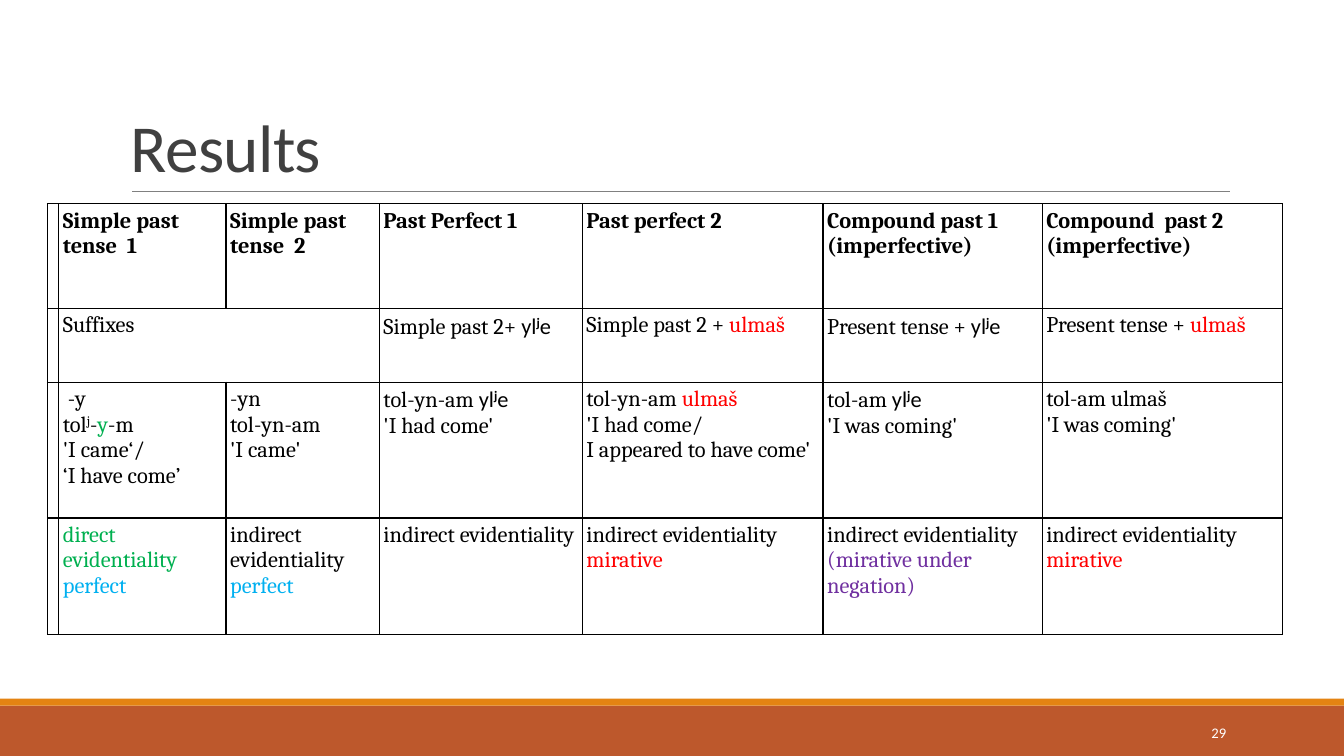
from dataclasses import dataclass

from lxml import etree
from pptx import Presentation
from pptx.dml.color import RGBColor
from pptx.enum.shapes import MSO_CONNECTOR, MSO_SHAPE
from pptx.enum.text import MSO_ANCHOR, PP_ALIGN
from pptx.oxml.ns import qn
from pptx.util import Pt

LEFT, RIGHT, JUSTIFY = PP_ALIGN.LEFT, PP_ALIGN.RIGHT, PP_ALIGN.JUSTIFY
TOP, MIDDLE, BOTTOM = MSO_ANCHOR.TOP, MSO_ANCHOR.MIDDLE, MSO_ANCHOR.BOTTOM
RECTANGLE, STRAIGHT = MSO_SHAPE.RECTANGLE, MSO_CONNECTOR.STRAIGHT


@dataclass(frozen=True)
class Theme:
    sans: str = "Calibri"
    serif: str = "Cambria"
    title_size: float = 48
    table_size: float = 16
    number_size: float = 10.5
    title: str = "404040"
    rule: str = "808080"
    footer: str = "BD582C"
    stripe: str = "E48312"
    white: str = "FFFFFF"
    black: str = "000000"
    red: str = "FF0000"
    green: str = "00B050"
    blue: str = "00B0F0"
    violet: str = "7030A0"


THEME = Theme()


def span(text, **style):
    return text, style


def line(*spans, align=LEFT):
    """One table paragraph; plain strings take the table's default style."""
    return [part if isinstance(part, tuple) else span(part) for part in spans], align


def even(*spans):
    return line(*spans, align=JUSTIFY)


# Recurring wording
YLE = (span("yl", font=THEME.sans),
       span("j", font=THEME.sans, bold=True, raised=30),
       span("e", font=THEME.sans))
ULMAS = span("ulmaš", color=THEME.red)
ULMAS_SPACED = span("ulmaš ", color=THEME.red)
INDIRECT = even("indirect evidentiality")
PERFECT = line(span("perfect", color=THEME.blue))
MIRATIVE = even(span("mirative", color=THEME.red))
WAS_COMING = "'I was coming'"

# Each row lists its cells after the narrow empty column; None is merged away
TENSES = [
    [
        [line("Simple past tense  1")],
        [line("Simple past tense  2")],
        [even("Past Perfect 1")],
        [even("Past perfect 2")],
        [even("Compound past 1"), even("(imperfective)")],
        [even("Compound  past 2"), even("(imperfective)")],
    ],
    [
        [even("Suffixes")],
        None,
        [even("Simple past 2+ ", *YLE)],
        [even("Simple past 2 + ", ULMAS)],
        [even("Present tense + ", *YLE)],
        [even("Present tense + ", ULMAS)],
    ],
    [
        [line(" -y"),
         line("tol", span("j", raised=30), "-", span("y", color=THEME.green), "-m"),
         line("'I came‘/"), line("‘I have come’")],
        [line("-yn"), line("tol-yn-am"), line("'I came'")],
        [even("tol-yn-am ", *YLE), even("'I had come'")],
        [even("tol-yn-am ", ULMAS_SPACED), even("'I had come/"),
         even("I appeared to have come'")],
        [line("tol-am ", *YLE), line(WAS_COMING)],
        [even("tol-am ulmaš "), even(WAS_COMING)],
    ],
    [
        [line(span("direct evidentiality", color=THEME.green)), PERFECT],
        [line("indirect evidentiality"), PERFECT],
        [INDIRECT],
        [INDIRECT, MIRATIVE],
        [INDIRECT, line(span("(mirative under negation)", color=THEME.violet))],
        [INDIRECT, MIRATIVE],
    ],
]
COLUMN_WIDTHS = [8, 119.5, 109.5, 145, 172, 156.5, 172]
ROW_HEIGHTS = [75, 52.5, 97, 83.5]


def write(para, text, font=THEME.serif, size=THEME.table_size, color=THEME.black,
          bold=False, raised=0, tracking=0):
    run = para.add_run()
    run.text = text
    run.font.name, run.font.size, run.font.bold = font, Pt(size), bold
    run.font.color.rgb = RGBColor.from_string(color)
    properties = run.font._element
    if raised:
        properties.set("baseline", str(raised * 1000))
    if tracking:
        properties.set("spc", str(round(tracking * 100)))


def add_text(page, box, text, align=LEFT, anchor=TOP, spacing=1.0, **style):
    frame = page.shapes.add_textbox(*map(Pt, box)).text_frame
    frame.word_wrap = True
    frame.vertical_anchor = anchor
    para = frame.paragraphs[0]
    para.alignment, para.line_spacing = align, spacing
    write(para, text, **style)


def add_band(page, box, color):
    band = page.shapes.add_shape(RECTANGLE, *map(Pt, box))
    band.shadow.inherit = False
    band.fill.solid()
    band.fill.fore_color.rgb = RGBColor.from_string(color)
    band.line.fill.background()


def add_footer(page, box, number):
    left, top, width, height = box
    stripe = 5
    add_band(page, (left, top + stripe, width, height - stripe), THEME.footer)
    add_band(page, (left, top, width, stripe), THEME.stripe)
    add_text(page, (left + width - 180, top + 9.5, 103, 29), number, align=RIGHT,
             anchor=MIDDLE, font=THEME.sans, size=THEME.number_size, color=THEME.white)


def add_title(page, box, text):
    left, top, width, height = box
    add_text(page, box, text, anchor=BOTTOM, spacing=0.85, font=THEME.sans,
             size=THEME.title_size, color=THEME.title, tracking=-0.5)
    # Rule along the bottom of the title
    base = Pt(top + height)
    rule = page.shapes.add_connector(STRAIGHT, Pt(left + 8), base, Pt(left + width), base)
    rule.line.color.rgb = RGBColor.from_string(THEME.rule)
    rule.line.width = Pt(0.5)
    etree.SubElement(rule._element.spPr, qn("a:effectLst"))


def add_borders(cell, color=THEME.black, width=1):
    properties = cell._tc.get_or_add_tcPr()
    for index, side in enumerate(("lnL", "lnR", "lnT", "lnB")):
        border = etree.Element(qn(f"a:{side}"), w=str(Pt(width)))
        fill = etree.SubElement(border, qn("a:solidFill"))
        etree.SubElement(fill, qn("a:srgbClr"), val=color)
        properties.insert(index, border)


def fill_cell(cell, lines, bold, margin):
    cell.margin_left = cell.margin_right = Pt(margin)
    cell.margin_top = cell.margin_bottom = Pt(3)
    cell.vertical_anchor = TOP
    frame = cell.text_frame
    for index, (spans, align) in enumerate(lines):
        para = frame.add_paragraph() if index else frame.paragraphs[0]
        para.alignment = align
        for text, style in spans:
            write(para, text, **{"bold": bold, **style})


def add_tense_table(page, box, rows):
    table = page.shapes.add_table(len(ROW_HEIGHTS), len(COLUMN_WIDTHS),
                                  *map(Pt, box)).table
    table.first_row = table.horz_banding = False
    for column, width in zip(table.columns, COLUMN_WIDTHS):
        column.width = Pt(width)
    for row, height in zip(table.rows, ROW_HEIGHTS):
        row.height = Pt(height)
    for row_index, entries in enumerate(rows):
        for column_index, lines in enumerate([[], *entries]):
            cell = table.cell(row_index, column_index)
            cell.fill.background()
            if lines is None:
                table.cell(row_index, column_index - 1).merge(cell)
                continue
            fill_cell(cell, lines, bold=row_index == 0, margin=3 if lines else 0)
            add_borders(cell)


def main():
    deck = Presentation()
    deck.slide_width, deck.slide_height = Pt(960), Pt(540)
    page = deck.slides.add_slide(deck.slide_layouts[6])
    add_footer(page, (0, 499, 960, 41), "29")
    add_title(page, (86.5, 22.5, 792, 114), "Results")
    add_tense_table(page, (34, 145.5, sum(COLUMN_WIDTHS), sum(ROW_HEIGHTS)), TENSES)
    deck.save("out.pptx")


if __name__ == "__main__":
    main()
